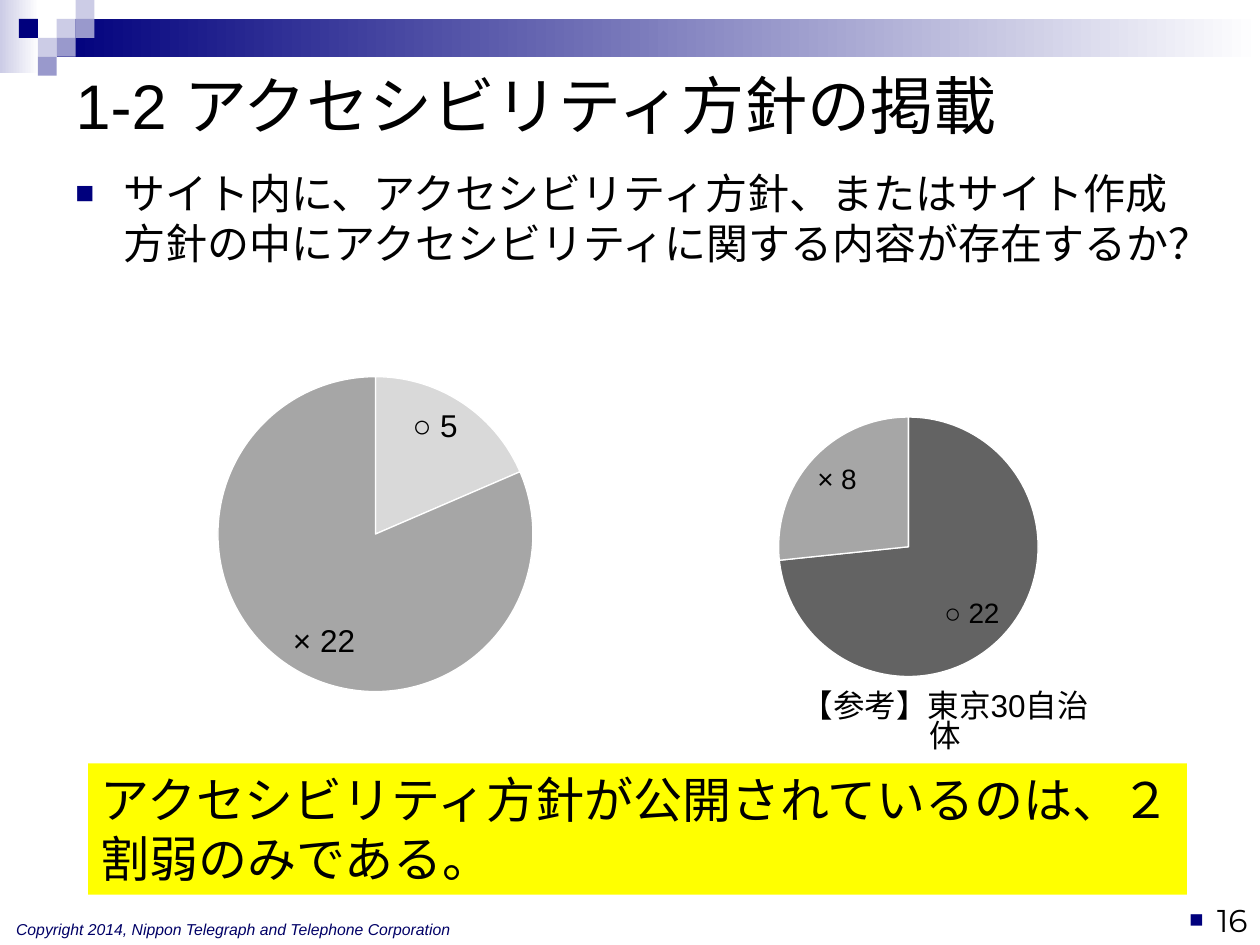
from lxml import etree
from pptx import Presentation
from pptx.chart.data import CategoryChartData as ChartData
from pptx.dml.color import RGBColor as RGB
from pptx.enum.chart import XL_CHART_TYPE as Chart, XL_LABEL_POSITION as Spot
from pptx.enum.shapes import MSO_SHAPE as Shape
from pptx.enum.text import MSO_ANCHOR as Anchor, PP_ALIGN as Align
from pptx.oxml.ns import qn
from pptx.util import Inches, Pt

HUE = {"navy": "00007D", "mid": "9999CC", "pale": "CCCCE6", "white": "FFFFFF",
       "black": "000000", "ink": "000066", "yellow": "FFFF00",
       "light": "D9D9D9", "gray": "A6A6A6", "dark": "636363"}

TITLE = "1-2 アクセシビリティ方針の掲載"
ASK = ("サイト内に、アクセシビリティ方針、またはサイト作成方針の中に"
       "アクセシビリティに関する内容が存在するか？")
NOTE = "【参考】東京30自治体"
FACT = "アクセシビリティ方針が公開されているのは、２割弱のみである。"
RIGHTS = "Copyright 2014, Nippon Telegraph and Telephone Corporation"
PAGE = "16"

BANDS = [((0, 0, 0.31, 0.58), "pale"), ((0.45, 0.15, 9.55, 0.3), "navy")]
TILE = 0.15
TILES = [(3, 1, "pale"), (4, 0, "pale"), (4, 1, "mid"), (2, 2, "pale"),
         (1, 1, "navy"), (3, 2, "mid"), (2, 3, "mid")]  # column, row, colour

# chart box, pie box, values, colours, label size
MARKS = ["○", "×"]
PIES = [((5.26, 3.17, 4.25, 2.46), (6.18, 3.31, 2.06, 2.06),
         (22, 8), ("dark", "gray"), 16),
        ((0.53, 2.63, 5, 3), (1.73, 2.99, 2.5, 2.5),
         (5, 22), ("light", "gray"), 18)]


def color(name):
    return RGB.from_string(HUE[name])


def place(box):
    return [Inches(v) for v in box]


def add_rect(slide, box, name, fade=False):
    rect = slide.shapes.add_shape(Shape.RECTANGLE, *place(box))
    rect.shadow.inherit = False
    rect.line.fill.background()
    if fade:
        rect.fill.gradient()
        rect.fill.gradient_angle = 0
        for stop, hue in zip(rect.fill.gradient_stops, (name, "white")):
            stop.color.rgb = color(hue)
    else:
        rect.fill.solid()
        rect.fill.fore_color.rgb = color(name)
    return rect


def add_bullet(para, indent):
    props = para._p.get_or_add_pPr()
    props.set("marL", str(Inches(indent)))
    props.set("indent", str(-Inches(indent)))
    hue = etree.SubElement(props, qn("a:buClr"))
    etree.SubElement(hue, qn("a:srgbClr"), val=HUE["navy"])
    etree.SubElement(props, qn("a:buSzPct"), val="75000")
    etree.SubElement(props, qn("a:buFont"), typeface="Arial")
    etree.SubElement(props, qn("a:buChar"), char="■")


def write(shape, text, size, name="black", face="Arial", align=Align.LEFT,
          anchor=Anchor.TOP, indent=None, italic=False):
    frame = shape.text_frame
    frame.word_wrap = True
    frame.vertical_anchor = anchor
    para = frame.paragraphs[0]
    para.alignment = align
    if indent:
        add_bullet(para, indent)
    run = para.add_run()
    run.text = text
    font = run.font
    font.size, font.name, font.italic = Pt(size), face, italic
    font.color.rgb = color(name)
    return para


def add_text(slide, box, *args, **opts):
    return write(slide.shapes.add_textbox(*place(box)), *args, **opts)


def fix_plot(chart, box, pie):
    """Pin the pie to its box, as fractions of the chart."""
    area = chart._chartSpace.find(".//" + qn("c:plotArea"))
    old = area.find(qn("c:layout"))
    if old is not None:
        area.remove(old)
    layout = etree.Element(qn("c:layout"))
    area.insert(0, layout)
    spot = etree.SubElement(layout, qn("c:manualLayout"))
    left, top, wide, high = box
    vals = [("layoutTarget", "inner"), ("xMode", "edge"), ("yMode", "edge"),
            ("x", (pie[0] - left) / wide), ("y", (pie[1] - top) / high),
            ("w", pie[2] / wide), ("h", pie[3] / high)]
    for tag, val in vals:
        etree.SubElement(spot, qn("c:" + tag), val=str(val))


def add_pie(slide, box, pie, vals, hues, size):
    data = ChartData()
    data.categories = MARKS
    data.add_series("Series 1", vals)
    chart = slide.shapes.add_chart(Chart.PIE, *place(box), data).chart
    chart.has_legend = chart.has_title = False
    chart.font.name, chart.font.size = "Arial", Pt(12)
    chart.font.color.rgb = color("black")
    plot = chart.plots[0]
    plot.vary_by_categories = True
    for i, hue in enumerate(hues):
        form = plot.series[0].points[i].format
        form.fill.solid()
        form.fill.fore_color.rgb = color(hue)
        form.line.color.rgb = color("white")
        form.line.width = Pt(0.75)
    plot.has_data_labels = True
    tags = plot.data_labels
    tags.show_category_name = tags.show_value = True
    tags.show_percentage = False
    tags.position = Spot.INSIDE_END
    tags.font.size, tags.font.name = Pt(size), "Arial"
    tags.font.color.rgb = color("black")
    gap = etree.Element(qn("c:separator"))
    gap.text = " "
    tags._element.find(qn("c:showBubbleSize")).addnext(gap)
    fix_plot(chart, box, pie)


def main():
    deck = Presentation()
    deck.slide_width, deck.slide_height = Inches(10), Inches(7.5)
    slide = deck.slides.add_slide(deck.slide_layouts[5])

    for box, hue in BANDS:
        add_rect(slide, box, hue, fade=True)
    for col, row, hue in TILES:
        add_rect(slide, (col * TILE, row * TILE, TILE, TILE), hue)

    head = slide.shapes.title
    head.left, head.top, head.width, head.height = place((0.5, 0.46, 8.93, 0.73))
    write(head, TITLE, 36, anchor=Anchor.MIDDLE)

    add_text(slide, (0.03, 7.25, 4.04, 0.24), RIGHTS, 9, "ink", italic=True)
    add_text(slide, (0.5, 1.28, 9, 1.3), ASK, 24, indent=0.38)
    add_text(slide, (7.67, 7, 2.33, 0.5), PAGE, 18, face="Montserrat",
             align=Align.RIGHT, anchor=Anchor.BOTTOM, indent=0.22)
    note = add_text(slide, (6.24, 5.45, 2.52, 0.34), NOTE, 18,
                    align=Align.CENTER)
    note.line_spacing = 0.8
    write(add_rect(slide, (0.7, 6.06, 8.72, 1.04), "yellow"), FACT, 28)

    for item in PIES:
        add_pie(slide, *item)
    deck.save("out.pptx")


if __name__ == "__main__":
    main()
